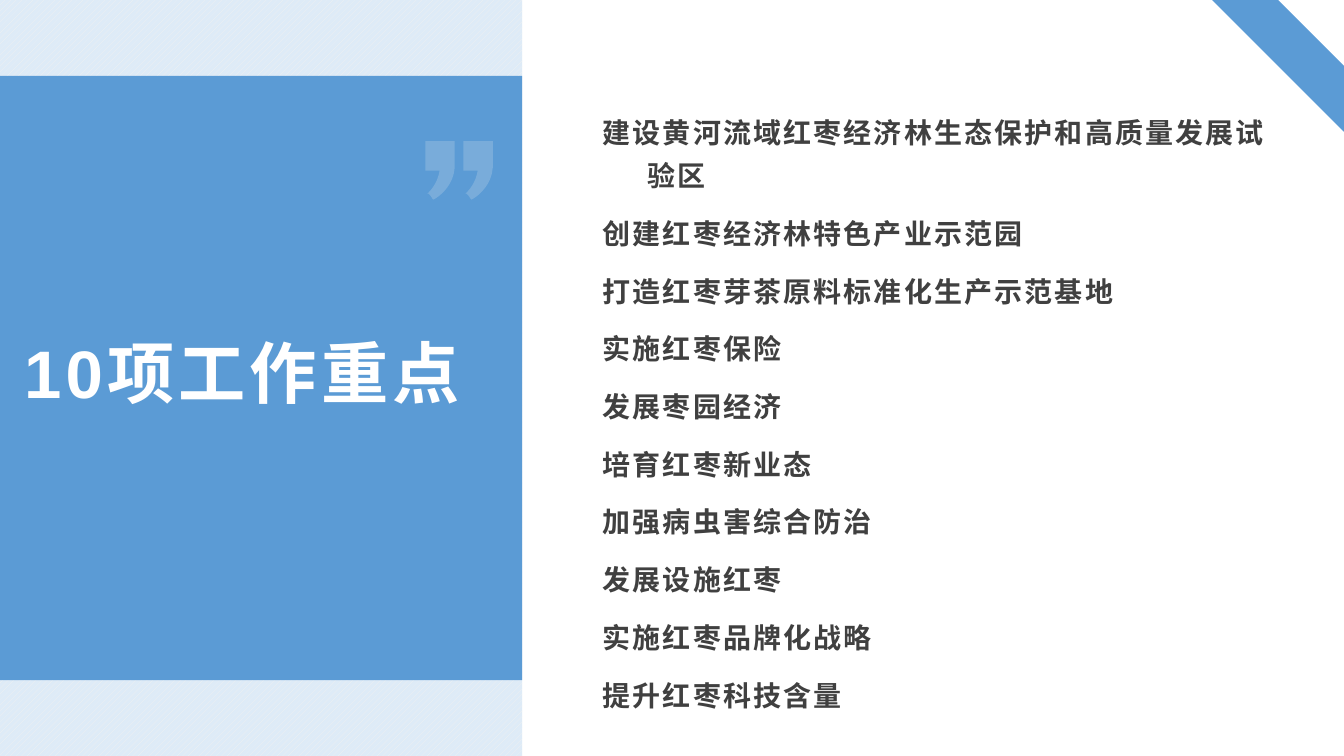
from lxml import etree
from pptx import Presentation
from pptx import util as u
from pptx.dml.color import RGBColor
from pptx.enum import dml, shapes, text
from pptx.oxml.ns import qn

COLORS = {"blue": "5B9BD5", "pale": "DEEBF7", "grey": "F2F2F2",
          "white": "FFFFFF", "ink": "404040"}
CHINESE_FONT = "Noto Sans CJK SC"
TITLE = "10项工作重点"
TASKS = [
    "建设黄河流域红枣经济林生态保护和高质量发展试验区",
    "创建红枣经济林特色产业示范园",
    "打造红枣芽茶原料标准化生产示范基地",
    "实施红枣保险",
    "发展枣园经济",
    "培育红枣新业态",
    "加强病虫害综合防治",
    "发展设施红枣",
    "实施红枣品牌化战略",
    "提升红枣科技含量",
]


def color(name):
    """Return the named palette colour."""
    return RGBColor.from_string(COLORS[name])


def add_block(page, kind, box, fill):
    """Add a borderless preset shape filled with a palette colour."""
    block = page.shapes.add_shape(kind, *map(u.Cm, box))
    block.shadow.inherit = False
    block.line.fill.background()
    block.fill.solid()
    block.fill.fore_color.rgb = color(fill)
    return block


def add_text_frame(page, box, anchor):
    """Add a wrapping text box and return its frame."""
    frame = page.shapes.add_textbox(*map(u.Cm, box)).text_frame
    frame.word_wrap = True
    frame.vertical_anchor = anchor
    return frame


def add_span(para, words, size, font, ink, spacing):
    """Add a bold run with letter spacing in points."""
    span = para.add_run()
    span.text = words
    span.font.size = u.Pt(size)
    span.font.bold = True
    span.font.name = font
    span.font.color.rgb = color(ink)
    properties = span.font._element
    properties.set("spc", str(int(spacing * 100)))
    east_asian = etree.Element(qn("a:ea"), typeface=CHINESE_FONT)
    properties.find(qn("a:latin")).addnext(east_asian)


def curve(start, first, second, end, steps=10):
    """Return points along a cubic curve, without its start."""
    points = []
    for step in range(1, steps + 1):
        t = step / steps
        weights = ((1 - t) ** 3, 3 * t * (1 - t) ** 2, 3 * t * t * (1 - t), t ** 3)
        points.append(tuple(
            sum(weight * value for weight, value in zip(weights, axis))
            for axis in zip(start, first, second, end)))
    return points


def add_quote_mark(page, left, top):
    """Draw one translucent closing comma mark."""
    outline = [(0.2, 1.47), (0.18, 1.45)]
    outline += curve(outline[-1], (0.15, 1.4), (0.13, 1.37), (0.08, 1.32))
    outline += [(0.05, 1.32)]
    outline += curve(outline[-1], (0.05, 1.32), (0.3, 1.12), (0.36, 0.74))
    outline += [(0, 0.74), (0, 0), (0.74, 0), (0.74, 0.66)]
    outline += curve(outline[-1], (0.71, 1.19), (0.23, 1.47), outline[0])
    points = [(u.Cm(left + x), u.Cm(top + y)) for x, y in outline]
    builder = page.shapes.build_freeform(*points[0])
    builder.add_line_segments(points[1:], close=True)
    mark = builder.convert_to_shape()
    mark.shadow.inherit = False
    mark.line.fill.background()
    mark.fill.solid()
    mark.fill.fore_color.rgb = color("grey")
    shade = mark.fill._xPr.find(qn("a:solidFill"))[0]
    etree.SubElement(shade, qn("a:alpha"), val="20000")


def add_title_panel(page, left, top, width, height):
    """Build the patterned side panel with its title and quote marks."""
    rectangle = shapes.MSO_SHAPE.RECTANGLE
    backdrop = add_block(page, rectangle, (left, top, width, height), "pale")
    backdrop.fill.patterned()
    backdrop.fill.pattern = dml.MSO_PATTERN.WIDE_UPWARD_DIAGONAL
    backdrop.fill.fore_color.rgb = color("grey")
    backdrop.fill.back_color.rgb = color("pale")
    margin = 1.91
    add_block(page, rectangle,
              (left, top + margin, width, height - 2 * margin), "blue")
    frame = add_text_frame(page, (left + 0.36, top + 4.67, width - 0.69, 5.84),
                           text.MSO_ANCHOR.BOTTOM)
    para = frame.paragraphs[0]
    para.line_spacing = 1.2
    add_span(para, TITLE, 48, "Arial", "white", 3)
    for offset in (2.44, 1.48):
        add_quote_mark(page, left + width - offset, top + 3.56)


def add_task_list(page, left, top, width, height):
    """Build the numbered list of tasks with hanging indents."""
    frame = add_text_frame(page, (left, top, width, height),
                           text.MSO_ANCHOR.MIDDLE)
    indent = u.Cm(1.13)
    for index, task in enumerate(TASKS):
        para = frame.add_paragraph() if index else frame.paragraphs[0]
        para.line_spacing = 1.3
        para.space_before = u.Pt(10)
        properties = para._p.get_or_add_pPr()
        properties.set("marL", str(indent))
        properties.set("indent", str(-indent))
        etree.SubElement(properties, qn("a:buAutoNum"), type="ea1JpnChsDbPeriod")
        add_span(para, task, 20, CHINESE_FONT, "ink", 1.5)


def add_corner_stripe(page, right, top, side):
    """Place the diagonal stripe in the upper right corner."""
    stripe = add_block(page, shapes.MSO_SHAPE.DIAGONAL_STRIPE,
                       (right - side, top, side, side), "blue")
    stripe._element.spPr.find(qn("a:xfrm")).set("flipH", "1")


def main():
    """Build and save the slide."""
    deck = Presentation()
    deck.slide_width, deck.slide_height = u.Cm(33.87), u.Cm(19.05)
    page = deck.slides.add_slide(deck.slide_layouts[6])
    add_title_panel(page, 0, 0, 13.16, 19.05)
    add_task_list(page, 14.94, 2.24, 17.78, 16.1)
    add_corner_stripe(page, 33.87, 0, 3.32)
    deck.save("out.pptx")


if __name__ == "__main__":
    main()
